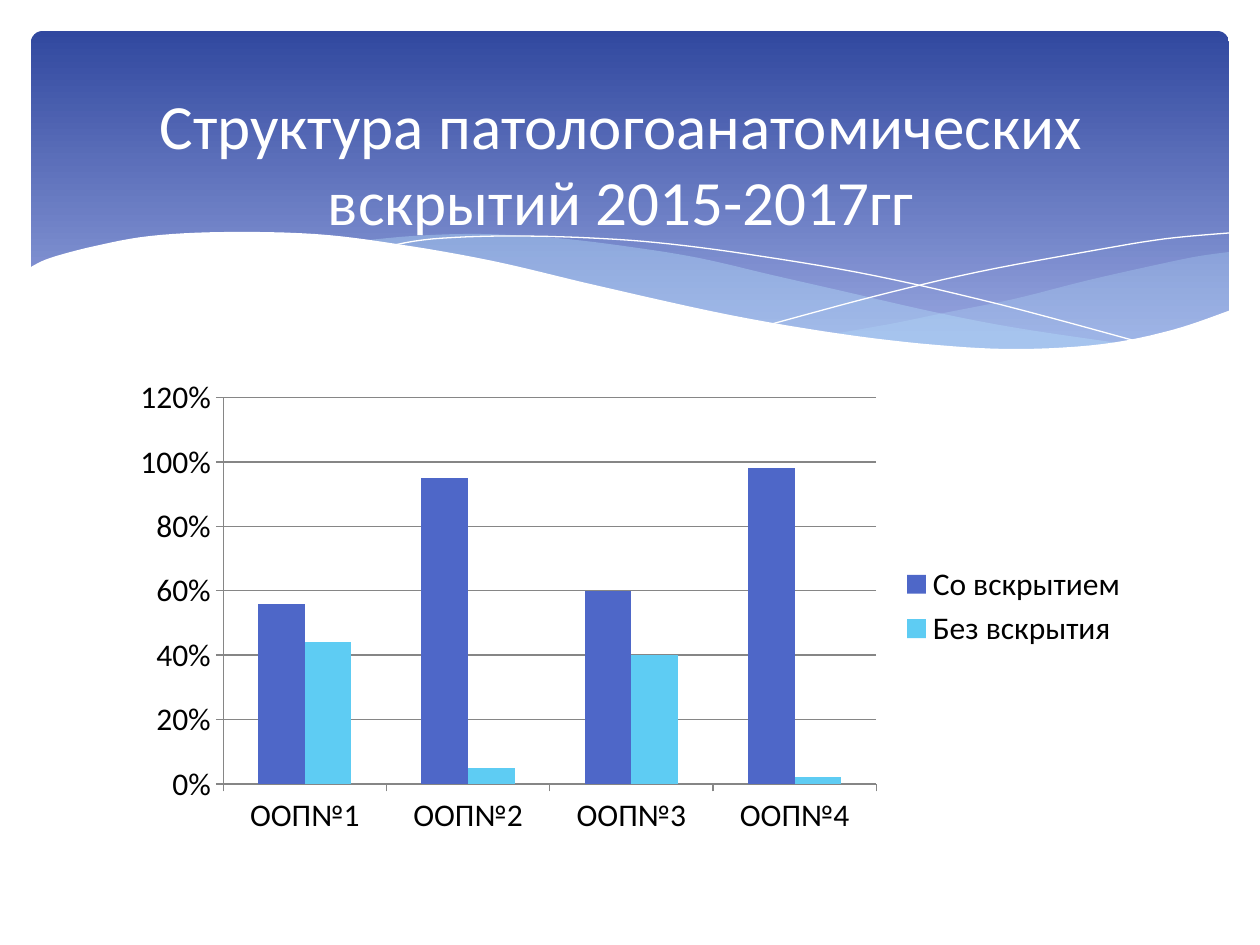
from pptx import Presentation
from pptx.chart.data import CategoryChartData
from pptx.dml.color import RGBColor
from pptx.enum.chart import XL_CHART_TYPE, XL_LEGEND_POSITION, XL_TICK_MARK
from pptx.enum.shapes import MSO_SHAPE
from pptx.enum.text import MSO_ANCHOR, PP_ALIGN
from pptx.oxml.xmlchemy import OxmlElement
from pptx.util import Pt

SCALE = 914400 / 126  # EMU in one px
FONT = "Calibri"
CURVE_STEPS = 6

# Wave knots in px, relative to the banner
RIGHT_WAVE = [
    [(1198, 221), (1163, 226), (1111, 237), (1054, 250), (983, 268),
     (918, 281), (859, 293), (802, 303)],
    [(802, 303), (840, 308), (908, 315), (981, 319), (1045, 317),
     (1099, 309), (1156, 295), (1198, 280)],
]
LONG_WAVE = [
    [(1094, 313), (986, 297), (903, 281), (811, 260), (741, 244), (668, 227),
     (600, 216), (525, 207), (448, 203), (382, 205), (329, 210)],
    [(329, 210), (400, 220), (478, 235), (588, 261), (682, 281), (788, 302),
     (879, 314), (958, 319), (1025, 319), (1094, 313)],
]
FALLING_LINE = [[(358, 215), (401, 208), (474, 205), (560, 207), (639, 213),
                 (735, 226), (845, 245), (971, 274), (1112, 312)]]
RISING_LINE = [[(741, 293), (845, 265), (947, 241), (1060, 220),
                (1133, 208), (1198, 202)]]
WHITE_WAVE = [
    [(1200, 279), (1141, 299), (1072, 313), (988, 318), (906, 314), (811, 303),
     (699, 284), (568, 255), (462, 230), (366, 213), (284, 203), (192, 201),
     (119, 205), (64, 215), (19, 227), (-2, 237)],
    [(-2, 384), (1200, 384)],
]


def px(length):
    return round(length * SCALE)


def color(value):
    return RGBColor.from_string(value)


def apply(target, values):
    for name, value in values.items():
        setattr(target, name, value)


def smooth(knots):
    """Points of a Catmull-Rom curve through the knots."""
    if len(knots) < 3:
        return knots
    padded = [knots[0], *knots, knots[-1]]
    points = [knots[0]]
    for a, b, c, d in zip(padded, padded[1:], padded[2:], padded[3:]):
        for step in range(1, CURVE_STEPS + 1):
            t = step / CURVE_STEPS
            points.append(tuple(
                b[i] + 0.5 * t * (c[i] - a[i]
                                  + t * (2 * a[i] - 5 * b[i] + 4 * c[i] - d[i]
                                         + t * (3 * (b[i] - c[i]) + d[i] - a[i])))
                for i in (0, 1)))
    return points


def add_wave(slide, origin, edges, fill=None, alpha=None, line=None):
    left, top = origin
    points = [(px(left + x), px(top + y)) for edge in edges for x, y in smooth(edge)]
    builder = slide.shapes.build_freeform(*points[0])
    builder.add_line_segments(points[1:], close=fill is not None)
    shape = builder.convert_to_shape()
    shape.shadow.inherit = False
    if fill:
        shape.fill.solid()
        shape.fill.fore_color.rgb = color(fill)
    else:
        shape.fill.background()
    if alpha:
        element = OxmlElement("a:alpha")
        element.set("val", str(alpha * 1000))
        shape.fill._xPr.find(".//{*}srgbClr").append(element)
    if line:
        shape.line.color.rgb = color(line)
        shape.line.width = Pt(0)
    else:
        shape.line.fill.background()


def add_banner(slide, left, top, width, height):
    # Gradient panel
    panel = slide.shapes.add_shape(MSO_SHAPE.ROUNDED_RECTANGLE,
                                   px(left), px(top), px(width), px(height))
    panel.adjustments[0] = 0.034
    panel.shadow.inherit = False
    panel.line.fill.background()
    panel.fill.gradient()
    panel.fill.gradient_angle = 270
    stops = ((0, "31489F"), (0.9, "95A4DE"))
    for stop, (position, value) in zip(panel.fill.gradient_stops, stops):
        stop.position = position
        stop.color.rgb = color(value)

    # Waves, back to front
    origin = (left, top)
    add_wave(slide, origin, RIGHT_WAVE, fill="B4DCFA", alpha=29)
    add_wave(slide, origin, LONG_WAVE, fill="B4DCFA", alpha=40)
    add_wave(slide, origin, FALLING_LINE, line="FFFFFF")
    add_wave(slide, origin, RISING_LINE, line="FFFFFF")
    add_wave(slide, origin, WHITE_WAVE, fill="FFFFFF")


def add_autopsy_chart(slide, left, top, width, height):
    data = CategoryChartData(number_format="0%")
    data.categories = [f"ООП№{number}" for number in range(1, 5)]
    data.add_series("Со вскрытием", (0.56, 0.95, 0.6, 0.98))
    data.add_series("Без вскрытия", (0.44, 0.05, 0.4, 0.02))
    chart = slide.shapes.add_chart(XL_CHART_TYPE.COLUMN_CLUSTERED, px(left), px(top),
                                   px(width), px(height), data).chart
    apply(chart, {"has_title": False, "has_legend": True})
    apply(chart.font, {"name": FONT, "size": Pt(18)})
    chart.font.color.rgb = color("000000")
    apply(chart.legend, {"position": XL_LEGEND_POSITION.RIGHT,
                         "include_in_layout": False})

    # Columns
    plot = chart.plots[0]
    apply(plot, {"gap_width": 150, "overlap": 0, "vary_by_categories": False})
    for series, value in zip(plot.series, ("4E67C8", "5ECCF3")):
        series.format.fill.solid()
        series.format.fill.fore_color.rgb = color(value)

    # Axes and gridlines
    value_axis, category_axis = chart.value_axis, chart.category_axis
    apply(value_axis, {"minimum_scale": 0, "maximum_scale": 1.2, "major_unit": 0.2,
                       "has_major_gridlines": True})
    apply(value_axis.tick_labels, {"number_format": "0%",
                                   "number_format_is_linked": False})
    for axis in (value_axis, category_axis):
        apply(axis, {"major_tick_mark": XL_TICK_MARK.OUTSIDE,
                     "minor_tick_mark": XL_TICK_MARK.NONE})
    for part in (value_axis, category_axis, value_axis.major_gridlines):
        part.format.line.color.rgb = color("868686")
        part.format.line.width = Pt(0.75)


def add_title(slide, left, top, width, height):
    frame = slide.shapes.add_textbox(px(left), px(top), px(width), px(height)).text_frame
    apply(frame, {"word_wrap": True, "vertical_anchor": MSO_ANCHOR.MIDDLE})
    paragraph = frame.paragraphs[0]
    paragraph.alignment = PP_ALIGN.CENTER
    run = paragraph.add_run()
    run.text = "Структура патологоанатомических вскрытий 2015-2017гг"
    apply(run.font, {"name": FONT, "size": Pt(36)})
    run.font.color.rgb = color("FFFFFF")


def main():
    presentation = Presentation()
    apply(presentation, {"slide_width": px(1260), "slide_height": px(945)})
    slide = presentation.slides.add_slide(presentation.slide_layouts[6])
    add_banner(slide, 31, 31, 1198, 340)
    add_autopsy_chart(slide, 120, 369, 1021, 475)
    add_title(slide, 54, 76, 1134, 173)
    presentation.save("out.pptx")


if __name__ == "__main__":
    main()
